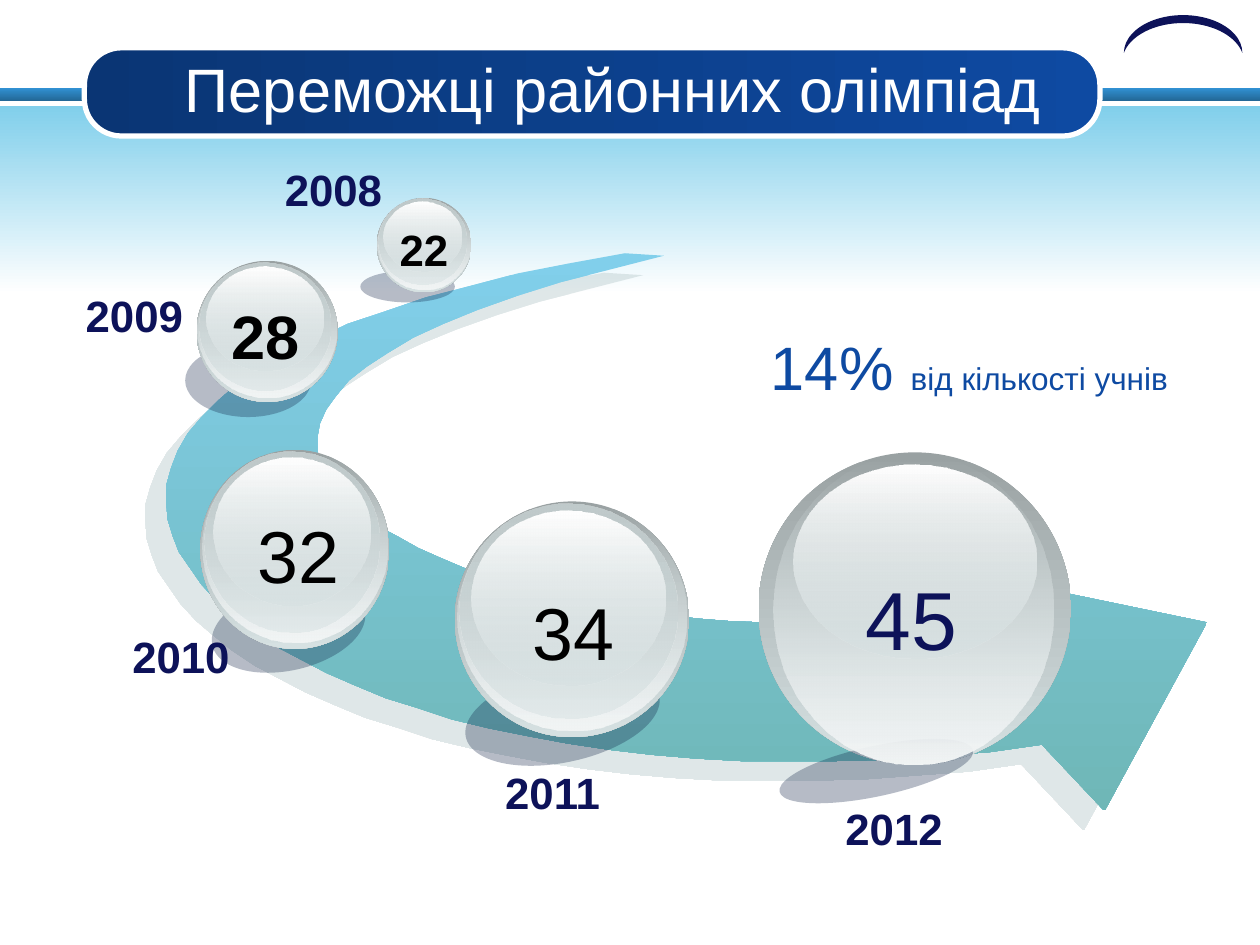
from lxml.etree import SubElement
from pptx import Presentation
from pptx.dml.color import RGBColor
from pptx.enum.shapes import MSO_SHAPE as SHAPE
from pptx.enum.text import MSO_ANCHOR as ANCHOR, MSO_AUTO_SIZE as AUTO_SIZE, PP_ALIGN as ALIGN
from pptx.oxml.ns import qn
from pptx.util import Inches, Pt

COLORS = {
    "white": "FFFFFF", "black": "000000", "navy": "0D1259", "blue": "0E4AA2",
    "title_dark": "0A3574", "stripe_light": "3191D3", "stripe_dark": "236897",
    "sky": "81CFEB", "teal": "6FB7B7", "arrow_shadow": "C1D1D3",
    "ball_shadow": "0F2145", "rim": "99A1A2", "silver": "D6E1E2",
    "pearl": "F2F5F5", "ash": "C1CBCC",
}

presentation = Presentation()
presentation.slide_width = Inches(10)
presentation.slide_height = Inches(7.5)
slide = presentation.slides.add_slide(presentation.slide_layouts[6])


def paint(shape, stops, angle=270):
    shape.shadow.inherit = False
    shape.line.fill.background()
    if len(stops) == 1:
        shape.fill.solid()
        shape.fill.fore_color.rgb = RGBColor.from_string(COLORS[stops[0][0]])
    else:
        shape.fill.gradient()
        shape.fill.gradient_angle = angle
        for stop, (color, _) in zip(shape.fill.gradient_stops, stops):
            stop.color.rgb = RGBColor.from_string(COLORS[color])
    for node, (_, opacity) in zip(shape.element.spPr.iter(qn("a:srgbClr")), stops):
        if opacity < 100:
            SubElement(node, qn("a:alpha"), val=str(opacity * 1000))
    return shape


def add_text(box, runs, color, bold=False, align=ALIGN.LEFT, wrap=True):
    text_box = slide.shapes.add_textbox(*map(Inches, box))
    frame = text_box.text_frame
    frame.word_wrap = wrap
    frame.auto_size = AUTO_SIZE.SHAPE_TO_FIT_TEXT
    paragraph = frame.paragraphs[0]
    paragraph.alignment = align
    paragraph.font.name = "Arial"
    paragraph.font.bold = bold
    paragraph.font.color.rgb = RGBColor.from_string(COLORS[color])
    for text, size in runs:
        run = paragraph.add_run()
        run.text = text
        run.font.size = Pt(size)
    return frame


bands = [
    ((0, 0.7, 10, 0.1), "stripe_light", "stripe_dark"),
    ((0, 0.84, 10, 1.49), "sky", "white"),
]
for box, top_color, bottom_color in bands:
    band = slide.shapes.add_shape(SHAPE.RECTANGLE, *map(Inches, box))
    paint(band, [(top_color, 100), (bottom_color, 100)])

title_bar = slide.shapes.add_shape(
    SHAPE.ROUNDED_RECTANGLE, Inches(0.67), Inches(0.38), Inches(8.06), Inches(0.7))
title_bar.adjustments[0] = 0.42
paint(title_bar, [("title_dark", 100), ("blue", 100)], 0)
title_bar.line.color.rgb = RGBColor.from_string(COLORS["white"])
title_bar.line.width = Pt(3)

moon = slide.shapes.add_shape(
    SHAPE.MOON, Inches(9.24), Inches(-0.2), Inches(0.3), Inches(0.94))
moon.adjustments[0] = 0.21
moon.rotation = 90
paint(moon, [("navy", 100)])

title = add_text((1.03, 0.39, 7.67, 0.62), [("Переможці районних олімпіад", 35)],
                 "white", align=ALIGN.CENTER)
title.auto_size = AUTO_SIZE.NONE
title.vertical_anchor = ANCHOR.MIDDLE

arrow_points = [
    (496, 201), (452, 209), (411, 217), (373, 227), (338, 236), (306, 247), (276, 257),
    (251, 269), (227, 281), (206, 293), (188, 305), (173, 318), (160, 331), (149, 344),
    (141, 358), (136, 371), (132, 385), (132, 398), (133, 412), (137, 425), (142, 438),
    (151, 451), (160, 464), (172, 477), (186, 489), (201, 501), (219, 513), (238, 523),
    (259, 534), (282, 544), (306, 554), (332, 562), (359, 571), (388, 578), (418, 584),
    (450, 590), (483, 595), (517, 599), (552, 602), (588, 604), (626, 604), (664, 604),
    (704, 603), (744, 600), (785, 597), (827, 591), (876, 643), (877, 643), (958, 494),
    (679, 436), (728, 488), (705, 491), (680, 493), (656, 495), (630, 495), (605, 494),
    (579, 493), (554, 491), (529, 488), (504, 485), (480, 481), (456, 476), (433, 470),
    (411, 464), (390, 458), (369, 451), (350, 443), (332, 435), (316, 426), (301, 418),
    (288, 408), (276, 399), (267, 389), (260, 378), (255, 368), (252, 358), (252, 347),
    (254, 336), (259, 325), (267, 314), (277, 302), (291, 291), (308, 280), (328, 268),
    (352, 257), (379, 246), (410, 235), (445, 224), (484, 214), (527, 203),
]
builder = slide.shapes.build_freeform(*arrow_points[0], scale=Inches(0.01))
builder.add_line_segments(arrow_points[1:], close=True)
arrow = paint(builder.convert_to_shape(), [("sky", 100), ("teal", 100)])
effects = arrow.element.spPr.find(qn("a:effectLst"))
shadow = SubElement(effects, qn("a:outerShdw"), blurRad="0", dist=str(Pt(16.3)),
                    dir=str(137 * 60000), algn="ctr", rotWithShape="0")
shadow_color = SubElement(shadow, qn("a:srgbClr"), val=COLORS["arrow_shadow"])
SubElement(shadow_color, qn("a:alpha"), val="50000")

rim = [("rim", 100), ("silver", 100)]
body = [("silver", 0), ("pearl", 100)]
shade = [("ash", 100), ("silver", 48)]
gloss = [("white", 100), ("silver", 38)]
cast = [("ball_shadow", 30)]
ball_layers = [
    (0, 0, 1, 1, rim),
    (0.01, 0, 0.98, 0.97, body),
    (0.02, 0.01, 0.93, 0.91, shade),
    (0.07, 0.04, 0.83, 0.74, gloss),
]

large_ball = [
    ((6.02, 3.59, 2.48, 2.48), 0, rim),
    ((6.17, 5.92, 1.57, 0.4), 347.9, cast),
    ((6.14, 3.61, 2.22, 2.46), 0, body),
    ((6.3, 3.69, 1.93, 1.54), 0, gloss),
]
for box, rotation, stops in large_ball:
    oval = slide.shapes.add_shape(SHAPE.OVAL, *map(Inches, box))
    oval.rotation = rotation
    paint(oval, stops)

balls = [
    ((3.61, 3.98, 1.86, 1.87), (3.68, 5.32, 1.57, 0.73), 347.9),
    ((1.59, 3.57, 1.5, 1.58), (1.67, 4.65, 1.24, 0.67), 347.1),
    ((1.56, 2.07, 1.12, 1.12), (1.47, 2.73, 1, 0.58), 0),
    ((2.99, 1.57, 0.75, 0.75), (2.86, 2.15, 0.75, 0.25), 0),
]
for (left, top, width, height), shadow_box, rotation in balls:
    ball_shadow = slide.shapes.add_shape(SHAPE.OVAL, *map(Inches, shadow_box))
    ball_shadow.rotation = rotation
    paint(ball_shadow, cast)
    for x, y, x_scale, y_scale, stops in ball_layers:
        layer = slide.shapes.add_shape(
            SHAPE.OVAL, Inches(left + x * width), Inches(top + y * height),
            Inches(x_scale * width), Inches(y_scale * height))
        paint(layer, stops)

counts = [
    ("45", (6.77, 4.46, 0.93, 0.89), 47, "navy", False),
    ("34", (4.12, 4.61, 0.86, 0.81), 42, "black", False),
    ("32", (1.94, 4, 0.86, 0.81), 42, "black", False),
    ("28", (1.73, 2.32, 0.75, 0.69), 35, "black", True),
    ("22", (3.07, 1.72, 0.59, 0.52), 25, "black", True),
]
for count, box, size, color, bold in counts:
    add_text(box, [(count, size)], color, bold, ALIGN.CENTER, False)

years = [
    ("2012", (6.62, 6.32, 1.08, 0.51)),
    ("2011", (3.92, 6.04, 1.14, 0.51)),
    ("2010", (0.96, 4.96, 1.08, 0.51)),
    ("2009", (0.59, 2.25, 1.22, 0.51)),
    ("2008", (2.17, 1.25, 1.08, 0.51)),
]
for year, box in years:
    frame = add_text(box, [(year, 25)], "navy", True)
    frame.margin_left = frame.margin_right = Inches(0.09)
    frame.margin_top = frame.margin_bottom = Inches(0.04)

add_text((6.02, 2.56, 3.46, 0.69), [("14% ", 35), ("від кількості учнів", 18)], "blue")

presentation.save("out.pptx")
